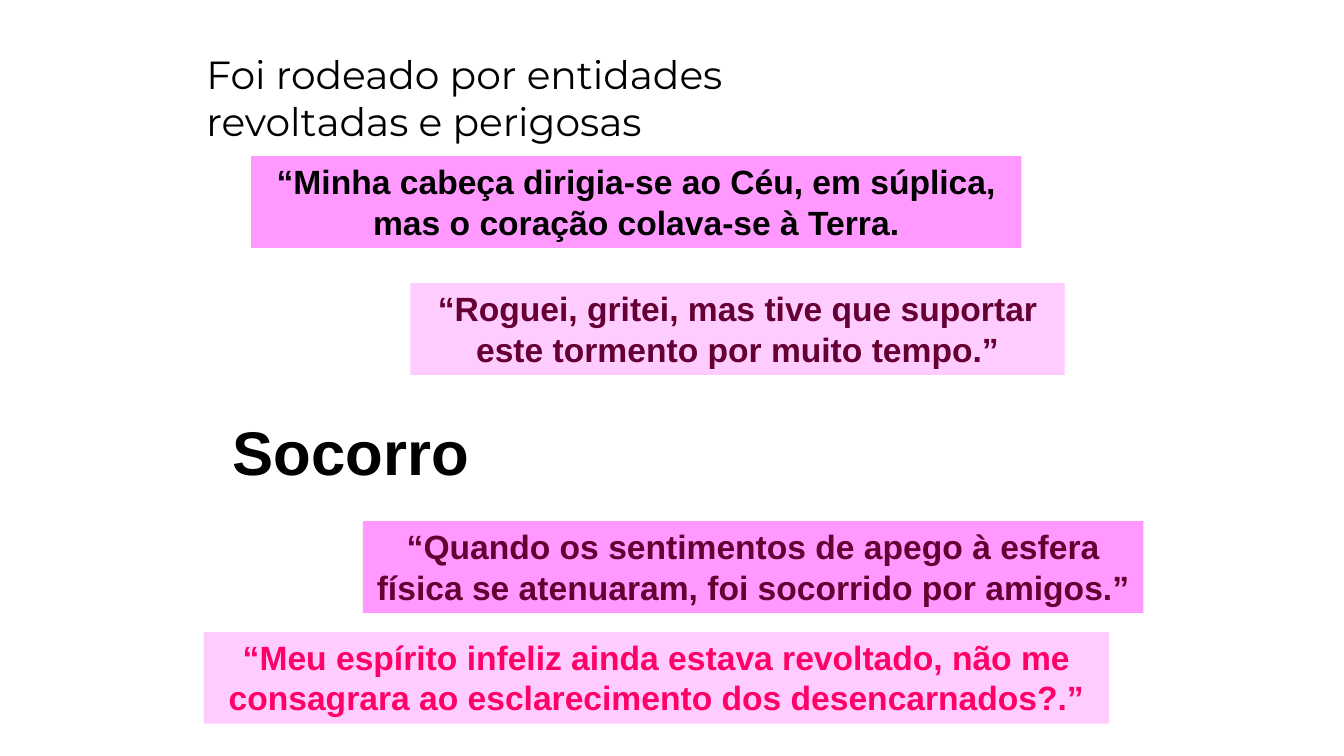
from pptx import Presentation
from pptx.dml.color import RGBColor
from pptx.enum.text import MSO_ANCHOR, PP_ALIGN
from pptx.util import Inches, Pt

BLACK = RGBColor(0x00, 0x00, 0x00)
WINE = RGBColor(0x66, 0x00, 0x33)
ROSE = RGBColor(0xFF, 0x00, 0x66)
PINK = RGBColor(0xFF, 0x99, 0xFF)
PALE = RGBColor(0xFF, 0xCC, 0xFF)

# Content: text, left, top, width, then height and style or colours
HEADS = [
    ("Foi rodeado por entidades revoltadas e perigosas",
     1.95, 0.45, 7.3, 1.03, "Montserrat", 28, False, PP_ALIGN.LEFT, MSO_ANCHOR.TOP),
    ("Socorro",
     1.94, 4.06, 3.08, 0.83, "Arial", 44, True, PP_ALIGN.CENTER, MSO_ANCHOR.MIDDLE),
]
QUOTES = [
    ("“Minha cabeça dirigia-se ao Céu, em súplica, mas o coração colava-se à Terra.",
     2.49, 1.55, 7.64, PINK, BLACK),
    ("“Roguei, gritei, mas tive que suportar este tormento por muito tempo.”",
     4.07, 2.81, 6.49, PALE, WINE),
    ("“Quando os sentimentos de apego à esfera física se atenuaram, "
     "foi socorrido por amigos.”",
     3.6, 5.17, 7.74, PINK, WINE),
    ("“Meu espírito infeliz ainda estava revoltado, não me consagrara "
     "ao esclarecimento dos desencarnados?.”",
     2.02, 6.27, 8.98, PALE, ROSE),
]
QUOTE_H = 0.91

deck = Presentation()
deck.slide_width, deck.slide_height = Inches(13.33), Inches(7.5)
slide = deck.slides.add_slide(deck.slide_layouts[6])


def write(box, text, face, size, bold, color, align, anchor):
    frame = box.text_frame
    frame.word_wrap = True
    frame.vertical_anchor = anchor
    para = frame.paragraphs[0]
    para.text = text
    para.alignment = align
    font = para.font
    font.name, font.size, font.bold = face, Pt(size), bold
    font.color.rgb = color


# Headings
for text, left, top, width, height, face, size, bold, align, anchor in HEADS:
    box = slide.shapes.add_textbox(*map(Inches, (left, top, width, height)))
    write(box, text, face, size, bold, BLACK, align, anchor)

# Quote panels
for text, left, top, width, fill, color in QUOTES:
    # A filled text box is a plain rectangle with no line or shadow
    box = slide.shapes.add_textbox(*map(Inches, (left, top, width, QUOTE_H)))
    box.fill.solid()
    box.fill.fore_color.rgb = fill
    write(box, text, "Arial", 24, True, color, PP_ALIGN.CENTER, MSO_ANCHOR.TOP)

deck.save("out.pptx")
